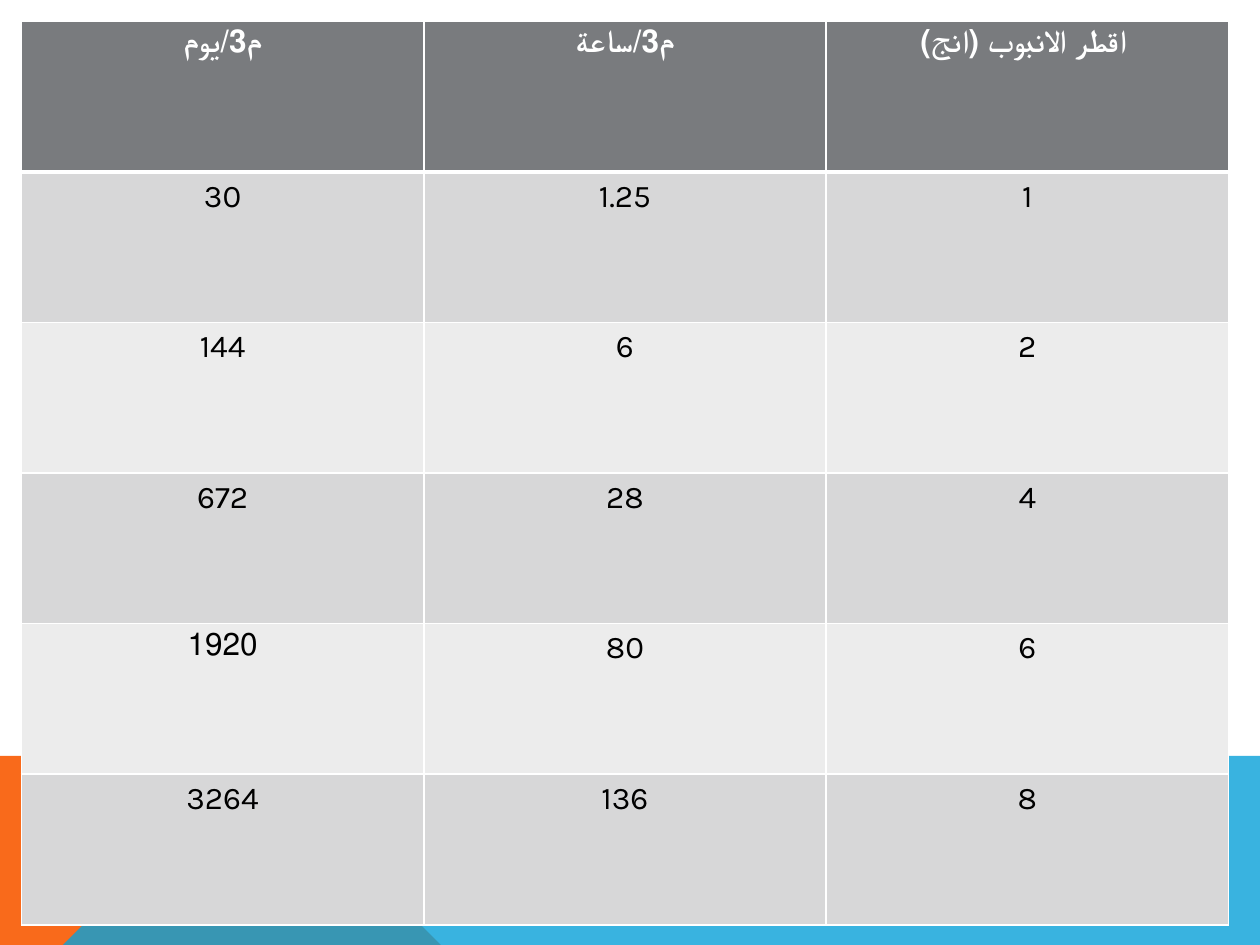
from lxml import etree
from pptx import Presentation
from pptx.dml.color import RGBColor
from pptx.enum.text import PP_ALIGN
from pptx.oxml.ns import qn
from pptx.util import Inches, Pt

CENTER = PP_ALIGN.CENTER
COLORS = {"orange": "F96A1B", "blue": "08A1D9", "head": "797B7E",
          "odd": "D7D7D8", "even": "ECECEC", "white": "FFFFFF", "black": "000000"}
FONT = "Karla"
WIDE, HIGH = 10, 7.5


def paint(fill, name):
    fill.solid()
    fill.fore_color.rgb = RGBColor.from_string(COLORS[name])


def edge(cell, side, width):
    props = cell._tc.get_or_add_tcPr()
    line = etree.SubElement(props, qn("a:ln" + side), w=str(Pt(width)))
    solid = etree.SubElement(line, qn("a:solidFill"))
    etree.SubElement(solid, qn("a:srgbClr"), val=COLORS["white"])


prs = Presentation()
prs.slide_width, prs.slide_height = Inches(WIDE), Inches(HIGH)
slide = prs.slides.add_slide(prs.slide_layouts[6])

# Bands at the foot of the slide
top = 5.52
bands = [
    ("orange", None, [(0, HIGH), (0, top), (2.23, top), (3.91, HIGH)]),
    ("blue", 80, [(0, HIGH), (2.23, top), (WIDE, top), (WIDE, HIGH)]),
]
for name, alpha, points in bands:
    path = slide.shapes.build_freeform(*points[0], scale=Inches(1))
    path.add_line_segments(points[1:], close=True)
    band = path.convert_to_shape()
    band.shadow.inherit = False
    band.line.fill.background()
    paint(band.fill, name)
    if alpha:
        color = band._element.spPr.find(".//" + qn("a:srgbClr"))
        etree.SubElement(color, qn("a:alpha"), val=str(alpha * 1000))

# Flow by pipe diameter
rows = [
    ("م3/يوم", "م3/ساعة", " اقطر الانبوب (انج)"),
    ("30", "1.25", "1"),
    ("144", "6", "2"),
    ("672", "28", "4"),
    ("1920", "80", "6"),
    ("3264", "136", "8"),
]
rtl = {(0, 2), (4, 0)}
left, width, height = 0.17, 9.58, 7.17
table = slide.shapes.add_table(len(rows), len(rows[0]), Inches(left), Inches(left),
                               Inches(width), Inches(height)).table

for r, row in enumerate(rows):
    head = r == 0
    shade = "head" if head else "odd" if r % 2 else "even"
    for c, text in enumerate(row):
        cell = table.cell(r, c)
        # Borders come before the fill, with a thick rule under the header
        for side in "LRTB":
            thick = (head and side == "B") or (r == 1 and side == "T")
            edge(cell, side, 3 if thick else 1)
        paint(cell.fill, shade)
        cell.text_frame.text = text
        para = cell.text_frame.paragraphs[0]
        para.alignment = CENTER
        if (r, c) in rtl:
            para._p.get_or_add_pPr().set("rtl", "1")
        font = para.runs[0].font
        font.name, font.size, font.bold = FONT, Pt(18), head
        font.color.rgb = RGBColor.from_string(COLORS["white" if head else "black"])

prs.save("out.pptx")
